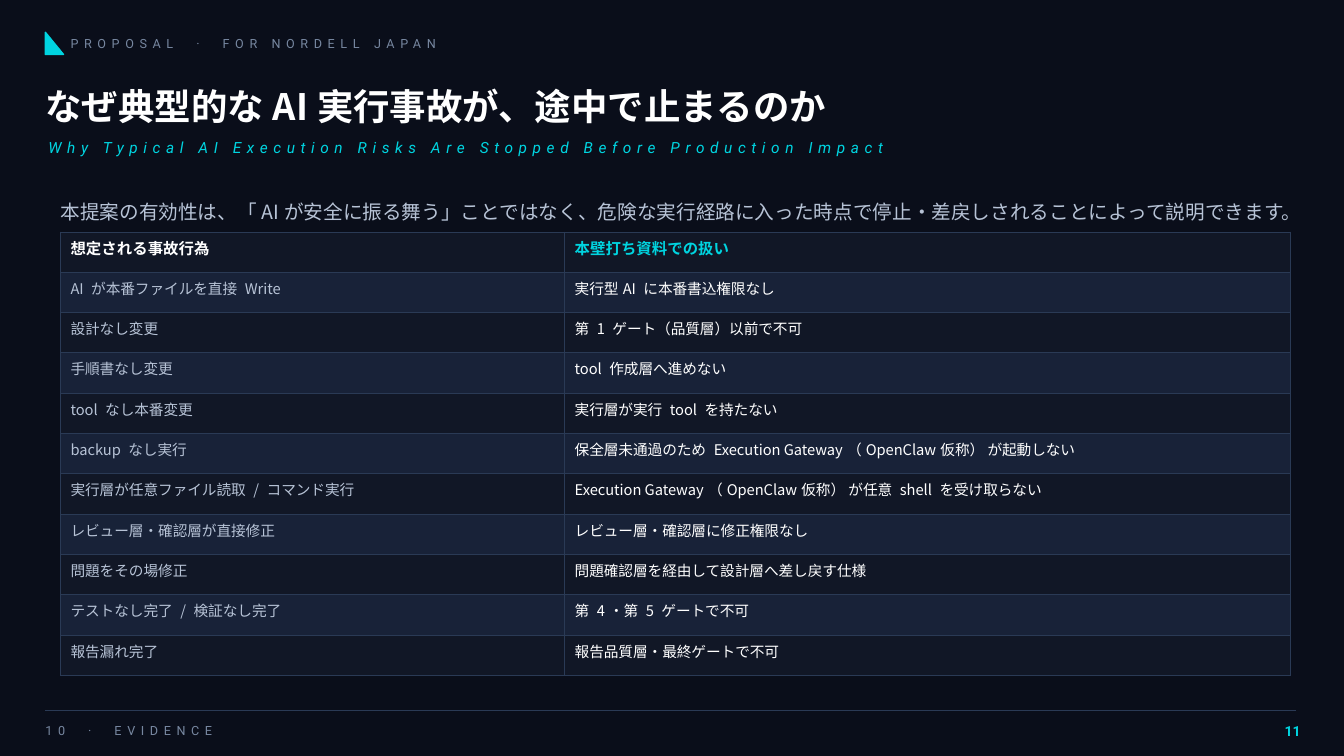
from lxml.etree import SubElement
from pptx import Presentation
from pptx.dml.color import RGBColor
from pptx.enum.shapes import MSO_CONNECTOR, MSO_SHAPE
from pptx.enum.text import MSO_ANCHOR, MSO_AUTO_SIZE, PP_ALIGN
from pptx.oxml.ns import qn
from pptx.util import Inches, Pt

# Content
BRAND = "PROPOSAL  ·  FOR NORDELL JAPAN"
TITLE = "なぜ典型的なAI実行事故が、途中で止まるのか"
SUBTITLE = "Why Typical AI Execution Risks Are Stopped Before Production Impact"
LEAD = ("本提案の有効性は、「AIが安全に振る舞う」ことではなく、"
        "危険な実行経路に入った時点で停止・差戻しされることによって説明できます。")
SECTION, PAGE = "10  ·  EVIDENCE", "11"
ROWS = [
    ("想定される事故行為", "本壁打ち資料での扱い"),
    ("AI が本番ファイルを直接 Write", "実行型AI に本番書込権限なし"),
    ("設計なし変更", "第 1 ゲート（品質層）以前で不可"),
    ("手順書なし変更", "tool 作成層へ進めない"),
    ("tool なし本番変更", "実行層が実行 tool を持たない"),
    ("backup なし実行", "保全層未通過のため Execution Gateway（OpenClaw仮称） が起動しない"),
    ("実行層が任意ファイル読取 / コマンド実行",
     "Execution Gateway（OpenClaw仮称） が任意 shell を受け取らない"),
    ("レビュー層・確認層が直接修正", "レビュー層・確認層に修正権限なし"),
    ("問題をその場修正", "問題確認層を経由して設計層へ差し戻す仕様"),
    ("テストなし完了 / 検証なし完了", "第 4・第 5 ゲートで不可"),
    ("報告漏れ完了", "報告品質層・最終ゲートで不可"),
]

# Style
NAVY = RGBColor(0x0A, 0x0E, 0x1A)
DARK = RGBColor(0x11, 0x17, 0x26)
BAND = RGBColor(0x18, 0x22, 0x38)
RULE = RGBColor(0x2A, 0x3A, 0x55)
CYAN = RGBColor(0x00, 0xD4, 0xE0)
WHITE = RGBColor(0xFF, 0xFF, 0xFF)
PALE = RGBColor(0xB7, 0xC3, 0xD6)
GREY = RGBColor(0x77, 0x87, 0xA0)
SANS, LATIN = "Noto Sans CJK JP", "Roboto"
COLS, ROW_H = (5, 7.2), 0.4


def style(para, size, color, face=SANS, bold=False, italic=False, track=0):
    font = para.font
    font.size, font.name = Pt(size), face
    font.bold, font.italic = bold, italic
    font.color.rgb = color
    props = para._p.pPr.find(qn("a:defRPr"))
    SubElement(props, qn("a:ea")).set("typeface", face)
    if track:
        props.set("spc", str(track * 100))


def write(shape, box, text, size, color, align=PP_ALIGN.LEFT, **look):
    shape.left, shape.top, shape.width, shape.height = map(Inches, box)
    frame = shape.text_frame
    frame.word_wrap, frame.auto_size = True, MSO_AUTO_SIZE.NONE
    frame.vertical_anchor = MSO_ANCHOR.MIDDLE
    frame.margin_left = frame.margin_right = 0
    frame.margin_top = frame.margin_bottom = 0
    frame.text = text
    para = frame.paragraphs[0]
    para.alignment = align
    style(para, size, color, **look)


def border(cell):
    props = cell._tc.get_or_add_tcPr()
    for side in ("lnL", "lnR", "lnT", "lnB"):
        line = SubElement(props, qn(f"a:{side}"), w=str(Pt(0.5)))
        fill = SubElement(line, qn("a:solidFill"))
        SubElement(fill, qn("a:srgbClr"), val=str(RULE))


deck = Presentation()
deck.slide_width, deck.slide_height = Inches(13.33), Inches(7.5)
slide = deck.slides.add_slide(deck.slide_layouts[5])
slide.background.fill.solid()
slide.background.fill.fore_color.rgb = NAVY
shapes = slide.shapes

# Corner mark
mark = shapes.add_shape(MSO_SHAPE.RIGHT_TRIANGLE, Inches(0.45), Inches(0.32),
                        Inches(0.18), Inches(0.22))
mark.shadow.inherit = False
mark.fill.solid()
mark.fill.fore_color.rgb = CYAN
mark.line.color.rgb = CYAN
mark.line.width = Pt(1)

# Title and text lines
write(shapes.title, (0.45, 0.75, 12, 0.6), TITLE, 26, WHITE, bold=True)
small = dict(face=LATIN, track=4)
for box, text, size, color, look in [
    ((0.7, 0.27, 6, 0.32), BRAND, 9, GREY, small),
    ((0.48, 1.3, 12, 0.32), SUBTITLE, 11, CYAN, dict(small, italic=True)),
    ((0.6, 1.85, 12.2, 0.5), LEAD, 14, PALE, {}),
    ((0.45, 7.1, 9, 0.3), SECTION, 9, GREY, small),
    ((12.45, 7.1, 0.45, 0.3), PAGE, 10, CYAN,
     dict(face=LATIN, bold=True, align=PP_ALIGN.RIGHT)),
]:
    write(shapes.add_textbox(0, 0, 0, 0), box, text, size, color, **look)

# Risk table
table = shapes.add_table(len(ROWS), len(COLS), Inches(0.6), Inches(2.3),
                         Inches(sum(COLS)), Inches(ROW_H * len(ROWS))).table
for col, width in zip(table.columns, COLS):
    col.width = Inches(width)
for r, row in enumerate(ROWS):
    table.rows[r].height = Inches(ROW_H)
    head = r == 0
    colors = (WHITE, CYAN) if head else (PALE, WHITE)
    for c, text in enumerate(row):
        cell = table.cell(r, c)
        cell.text = text
        style(cell.text_frame.paragraphs[0], 11 if head else 10.5, colors[c],
              bold=head)
        border(cell)
        cell.fill.solid()
        cell.fill.fore_color.rgb = BAND if r % 2 else DARK

# Footer rule
rule = shapes.add_connector(MSO_CONNECTOR.STRAIGHT, Inches(0.45), Inches(7.05),
                            Inches(12.85), Inches(7.05))
rule.line.color.rgb = RULE
rule.line.width = Pt(0.6)
SubElement(rule._element.spPr, qn("a:effectLst"))

deck.save("out.pptx")
